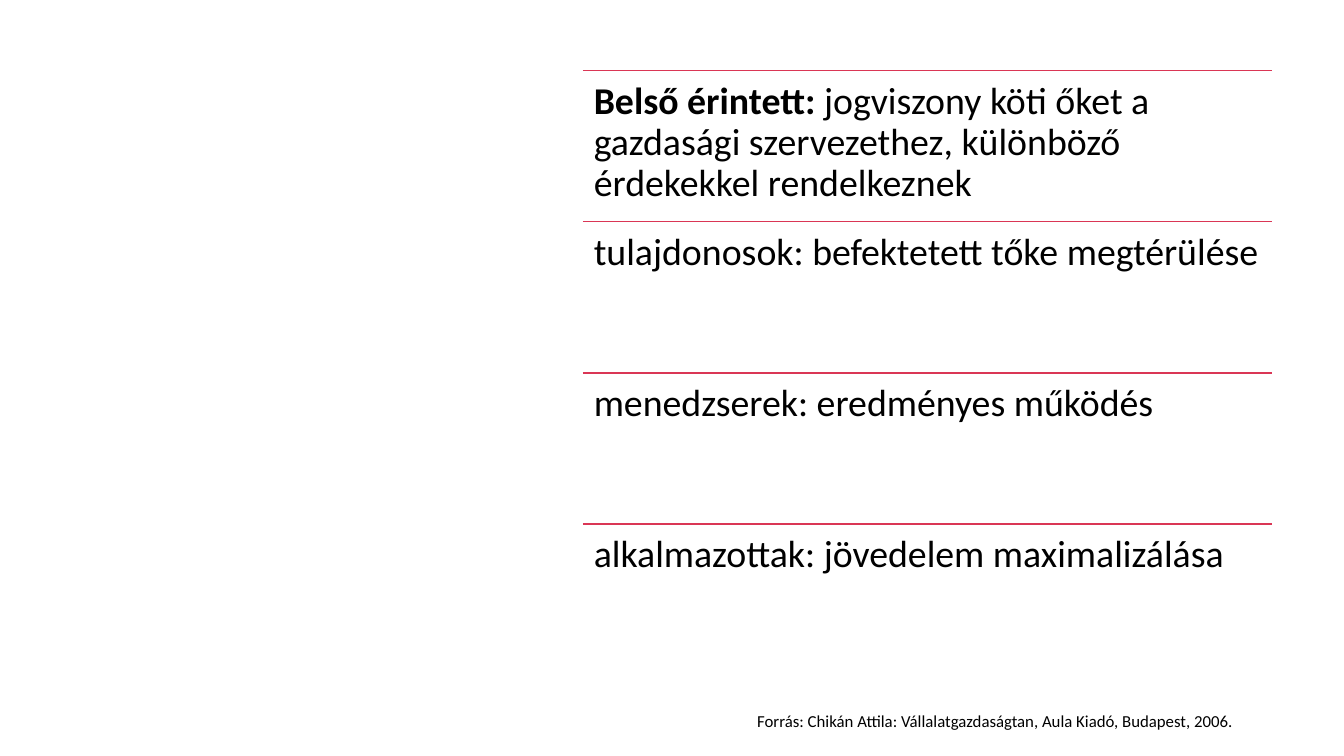
from lxml import etree
from pptx import Presentation
from pptx.dml.color import RGBColor
from pptx.enum.shapes import MSO_CONNECTOR
from pptx.enum.text import MSO_ANCHOR
from pptx.oxml.ns import qn
from pptx.util import Inches, Pt

COLORS = {"rule": "DA3655", "text": "000000"}
FONT = "Calibri"
LEFT, TOP, WIDTH, ROW_HEIGHT = 5.78, 0.7, 6.84, 1.5

# Each row is a bold lead-in and the text that follows it.
STAKEHOLDERS = [
    ("Belső érintett:", " jogviszony köti őket a gazdasági szervezethez, "
                        "különböző érdekekkel rendelkeznek"),
    ("", "tulajdonosok: befektetett tőke megtérülése"),
    ("", "menedzserek: eredményes működés"),
    ("", "alkalmazottak: jövedelem maximalizálása"),
]
CITATION = "Forrás: Chikán Attila: Vállalatgazdaságtan, Aula Kiadó, Budapest, 2006."


def add_rule(slide, top):
    rule = slide.shapes.add_connector(
        MSO_CONNECTOR.STRAIGHT,
        Inches(LEFT), Inches(top), Inches(LEFT + WIDTH), Inches(top))
    rule.line.color.rgb = RGBColor.from_string(COLORS["rule"])
    rule.line.width = Pt(1)
    etree.SubElement(rule._element.spPr, qn("a:effectLst"))


def add_text(slide, left, top, height, inset, size, lead, body):
    """Add a top-anchored text box with an optional bold lead-in."""
    frame = slide.shapes.add_textbox(
        Inches(left), Inches(top), Inches(WIDTH), Inches(height)).text_frame
    frame_format = {"word_wrap": True, "vertical_anchor": MSO_ANCHOR.TOP}
    for side in ("left", "top", "right", "bottom"):
        frame_format[f"margin_{side}"] = Inches(inset)
    for name, value in frame_format.items():
        setattr(frame, name, value)

    paragraph = frame.paragraphs[0]
    paragraph.line_spacing = 0.9
    for wording, bold in ((lead, True), (body, False)):
        if not wording:
            continue
        run = paragraph.add_run()
        run.text = wording
        font_format = {"name": FONT, "size": Pt(size), "bold": bold}
        for name, value in font_format.items():
            setattr(run.font, name, value)
        run.font.color.rgb = RGBColor.from_string(COLORS["text"])


def main():
    presentation = Presentation()
    presentation.slide_width = Inches(13.33)
    presentation.slide_height = Inches(7.5)
    slide = presentation.slides.add_slide(presentation.slide_layouts[6])

    for index, (lead, body) in enumerate(STAKEHOLDERS):
        top = TOP + index * ROW_HEIGHT
        add_rule(slide, top)
        add_text(slide, LEFT, top, ROW_HEIGHT, 0.11, 27, lead, body)
    add_text(slide, 7.46, 7.02, 0.67, 0.05, 12, "", CITATION)

    presentation.save("out.pptx")


if __name__ == "__main__":
    main()
